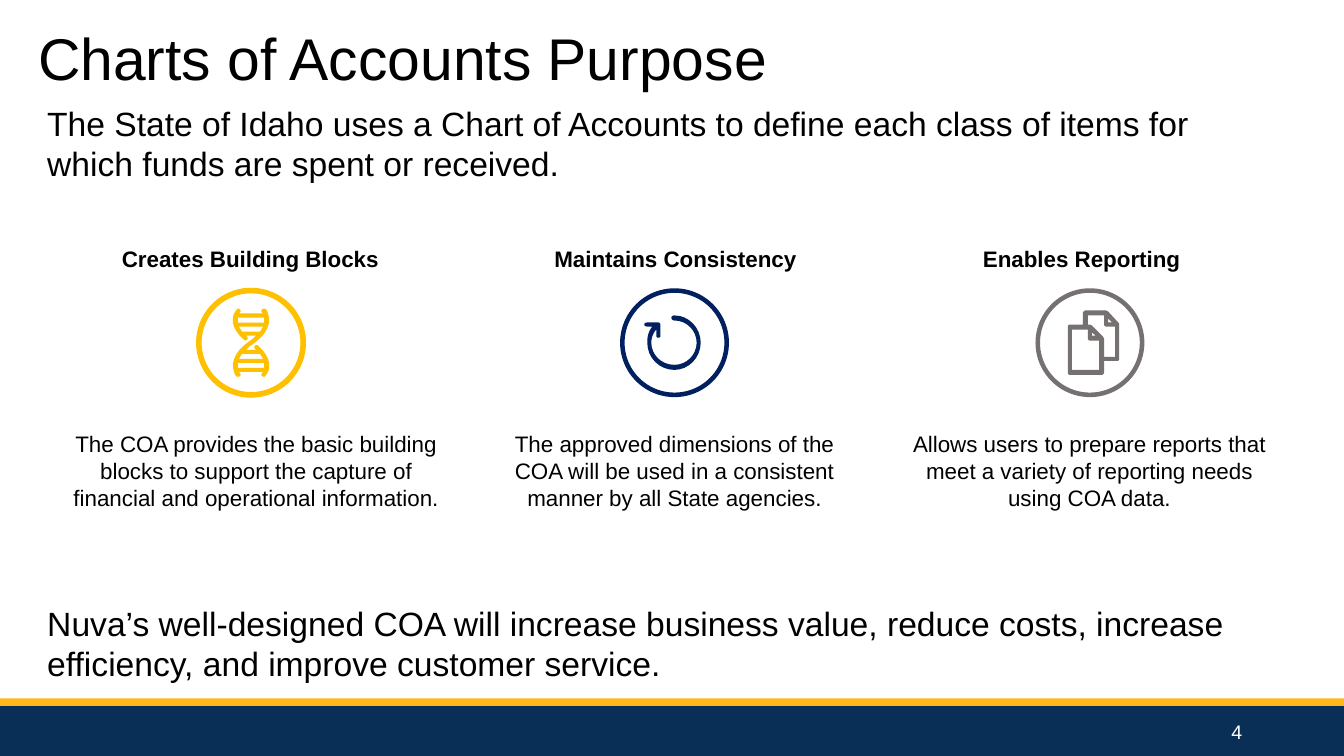
from dataclasses import dataclass

from pptx import Presentation
from pptx.dml.color import RGBColor
from pptx.enum.shapes import MSO_SHAPE
from pptx.enum.text import MSO_ANCHOR, PP_ALIGN
from pptx.util import Inches, Pt

COLORS = {
    "navy": "092F57", "amber": "FFB81C", "black": "000000", "white": "FFFFFF",
    "gold": "FFC000", "blue": "002060", "gray": "767171",
}
FONT = "Arial"
RING_TOP, RING_SIZE, RING_BAND = 2.86, 1.08, 0.045
UNITS = 914400  # freeform units per inch
CURVE_STEPS = 8

# An outline is a list of steps: (x, y) is a line, six numbers are a Bezier curve
Outline = list[tuple[float, ...]]


@dataclass
class Column:
    heading: str
    heading_left: float
    heading_width: float
    text: str
    text_left: float
    text_width: float
    text_height: float
    ring_left: float
    color: str
    icon: list[Outline]


def half_turn(outline: Outline, cx: float = 2.49, cy: float = 3.4) -> Outline:
    """Turn an outline by 180 degrees about a centre."""
    return [tuple(2 * (cy if i % 2 else cx) - v for i, v in enumerate(step))
            for step in outline]


def flatten(outline: Outline) -> list[tuple[float, float]]:
    """Change curves into short straight segments."""
    points = [outline[0]]
    for step in outline[1:]:
        if len(step) == 2:
            points.append(step)
            continue
        p0, p1, p2, p3 = points[-1], step[:2], step[2:4], step[4:]
        for i in range(1, CURVE_STEPS + 1):
            t = i / CURVE_STEPS
            u = 1 - t
            points.append(tuple(
                u**3 * a + 3 * u * u * t * b + 3 * u * t * t * c + t**3 * d
                for a, b, c, d in zip(p0, p1, p2, p3)))
    return points


def paint(sp, color: str) -> None:
    sp.shadow.inherit = False
    sp.fill.solid()
    sp.fill.fore_color.rgb = RGBColor.from_string(COLORS[color])
    sp.line.fill.background()


def add_bar(s, top: float, height: float, color: str) -> None:
    sp = s.shapes.add_shape(MSO_SHAPE.RECTANGLE, 0, Inches(top),
                            Inches(13.33), Inches(height))
    paint(sp, color)


def add_text(s, text: str, left: float, top: float, width: float, height: float,
             size: int, color: str = "black", bold: bool = False,
             align: PP_ALIGN = PP_ALIGN.LEFT,
             anchor: MSO_ANCHOR = MSO_ANCHOR.TOP) -> None:
    box = s.shapes.add_textbox(Inches(left), Inches(top), Inches(width), Inches(height))
    tf = box.text_frame
    tf.word_wrap = True
    tf.vertical_anchor = anchor
    tf.text = text
    p = tf.paragraphs[0]
    p.alignment = align
    r = p.runs[0]
    r.font.name = FONT
    r.font.size = Pt(size)
    r.font.bold = bold
    r.font.color.rgb = RGBColor.from_string(COLORS[color])


def add_ring(s, left: float, color: str) -> None:
    sp = s.shapes.add_shape(MSO_SHAPE.DONUT, Inches(left), Inches(RING_TOP),
                            Inches(RING_SIZE), Inches(RING_SIZE))
    sp.adjustments[0] = RING_BAND / RING_SIZE
    paint(sp, color)
    if color == "gold":
        sp.line.color.rgb = RGBColor.from_string(COLORS[color])
        sp.line.width = Pt(0.75)


def add_icon(s, outlines: list[Outline], color: str) -> None:
    first, *rest = [flatten(outline) for outline in outlines]
    fb = s.shapes.build_freeform(*[v * UNITS for v in first[0]], scale=1.0)
    fb.add_line_segments([(x * UNITS, y * UNITS) for x, y in first[1:]])
    for points in rest:
        fb.move_to(*[v * UNITS for v in points[0]])
        fb.add_line_segments([(x * UNITS, y * UNITS) for x, y in points[1:]])
    paint(fb.convert_to_shape(), color)


def add_column(s, col: Column) -> None:
    add_text(s, col.heading, col.heading_left, 2.38, col.heading_width, 0.37, 16, bold=True)
    add_ring(s, col.ring_left, col.color)
    add_icon(s, col.icon, col.color)
    add_text(s, col.text, col.text_left, 4.22, col.text_width, col.text_height, 16,
             align=PP_ALIGN.CENTER)


# Double helix: one strand and two gaps, each repeated by a half turn
STRAND: Outline = [
    (2.56, 3.43), (2.55, 3.42, 2.54, 3.42, 2.53, 3.43),
    (2.52, 3.44, 2.52, 3.45, 2.53, 3.46), (2.54, 3.47), (2.44, 3.47),
    (2.46, 3.45, 2.48, 3.43, 2.5, 3.42), (2.63, 3.33, 2.66, 3.25, 2.67, 3.19),
    (2.67, 3.15, 2.66, 3.1, 2.64, 3.07), (2.63, 3.06, 2.61, 3.06, 2.6, 3.07),
    (2.59, 3.08, 2.59, 3.09, 2.6, 3.1), (2.61, 3.11), (2.37, 3.11), (2.38, 3.1),
    (2.39, 3.09, 2.39, 3.08, 2.38, 3.07), (2.37, 3.06, 2.35, 3.06, 2.35, 3.07),
    (2.29, 3.13, 2.28, 3.25, 2.42, 3.37),
]
GAPS: list[Outline] = [
    [(2.37, 3.24), (2.61, 3.24), (2.6, 3.26, 2.59, 3.27, 2.58, 3.29), (2.4, 3.29),
     (2.39, 3.27, 2.38, 3.26, 2.37, 3.24)],
    [(2.62, 3.15), (2.62, 3.2), (2.36, 3.2), (2.36, 3.15)],
]
HELIX = [STRAND + half_turn(STRAND)[1:], *GAPS, *[half_turn(gap) for gap in GAPS]]

# Circular arrow
ARROW: list[Outline] = [[
    (6.95, 3.4), (6.95, 3.55, 6.83, 3.67, 6.69, 3.67), (6.54, 3.67, 6.42, 3.55, 6.42, 3.4),
    (6.42, 3.34, 6.43, 3.29, 6.47, 3.24), (6.42, 3.24),
    (6.4, 3.24, 6.39, 3.23, 6.39, 3.22), (6.39, 3.21, 6.4, 3.2, 6.42, 3.2), (6.53, 3.2),
    (6.54, 3.2, 6.55, 3.21, 6.55, 3.22), (6.55, 3.33),
    (6.55, 3.35, 6.54, 3.35, 6.53, 3.35), (6.52, 3.35, 6.51, 3.35, 6.51, 3.33),
    (6.51, 3.27), (6.48, 3.3, 6.46, 3.35, 6.46, 3.4),
    (6.46, 3.52, 6.56, 3.62, 6.69, 3.62), (6.81, 3.62, 6.91, 3.52, 6.91, 3.4),
    (6.91, 3.28, 6.81, 3.18, 6.69, 3.18), (6.67, 3.18, 6.66, 3.17, 6.66, 3.15),
    (6.66, 3.14, 6.67, 3.13, 6.69, 3.13), (6.83, 3.13, 6.95, 3.25, 6.95, 3.4),
]]

# Two pages: outer edge, folded corners and page interiors
PAGES: list[Outline] = [
    [(11.1, 3.21), (10.99, 3.09), (10.97, 3.08), (10.77, 3.08),
     (10.75, 3.08, 10.74, 3.1, 10.74, 3.11), (10.74, 3.22), (10.61, 3.22),
     (10.6, 3.22, 10.59, 3.23, 10.59, 3.24), (10.59, 3.69),
     (10.59, 3.71, 10.6, 3.72, 10.61, 3.72), (10.92, 3.72),
     (10.94, 3.72, 10.95, 3.71, 10.95, 3.69), (10.95, 3.58), (11.08, 3.58),
     (11.1, 3.58, 11.1, 3.57, 11.1, 3.56)],
    [(10.99, 3.16), (11.03, 3.2), (10.99, 3.2)],
    [(10.9, 3.67), (10.63, 3.67), (10.63, 3.27), (10.79, 3.27), (10.79, 3.36),
     (10.79, 3.37, 10.8, 3.38, 10.81, 3.38), (10.9, 3.38)],
    [(10.83, 3.33), (10.83, 3.3), (10.87, 3.33)],
    [(11.06, 3.54), (10.95, 3.54), (10.95, 3.36), (10.94, 3.34), (10.83, 3.23),
     (10.81, 3.22), (10.79, 3.22), (10.79, 3.13), (10.95, 3.13), (10.95, 3.22),
     (10.95, 3.23, 10.96, 3.24, 10.97, 3.24), (11.06, 3.24)],
]

COLUMNS = [
    Column("Creates Building Blocks", 1.11, 2.85,
           "The COA provides the basic building blocks to support the capture of "
           "financial and operational information.",
           0.63, 3.82, 1.18, 1.95, "gold", HELIX),
    Column("Maintains Consistency", 5.4, 2.61,
           "The approved dimensions of the COA will be used in a consistent manner "
           "by all State agencies.",
           4.78, 3.82, 0.91, 6.15, "blue", ARROW),
    Column("Enables Reporting", 9.65, 2.35,
           "Allows users to prepare reports that meet a variety of reporting needs "
           "using COA data.",
           8.93, 3.75, 0.91, 10.27, "gray", PAGES),
]


def main() -> None:
    prs = Presentation()
    prs.slide_width, prs.slide_height = Inches(13.33), Inches(7.5)
    s = prs.slides.add_slide(prs.slide_layouts[6])

    # Footer bars
    add_bar(s, 7, 0.5, "navy")
    add_bar(s, 6.93, 0.07, "amber")

    # Title and introduction
    add_text(s, "Charts of Accounts Purpose", 0.28, 0.17, 12.76, 0.81, 42)
    add_text(s, "The State of Idaho uses a Chart of Accounts to define each class of "
                "items for which funds are spent or received.", 0.37, 0.97, 12.4, 0.91, 24)

    # Three purposes
    for col in COLUMNS:
        add_column(s, col)

    # Conclusion and page number
    add_text(s, "Nuva’s well-designed COA will increase business value, reduce costs, "
                "increase efficiency, and improve customer service.",
             0.37, 5.93, 12.59, 0.91, 24)
    add_text(s, "4", 9.42, 7.06, 3, 0.4, 14, "white", align=PP_ALIGN.RIGHT,
             anchor=MSO_ANCHOR.MIDDLE)

    prs.save("out.pptx")


if __name__ == "__main__":
    main()
